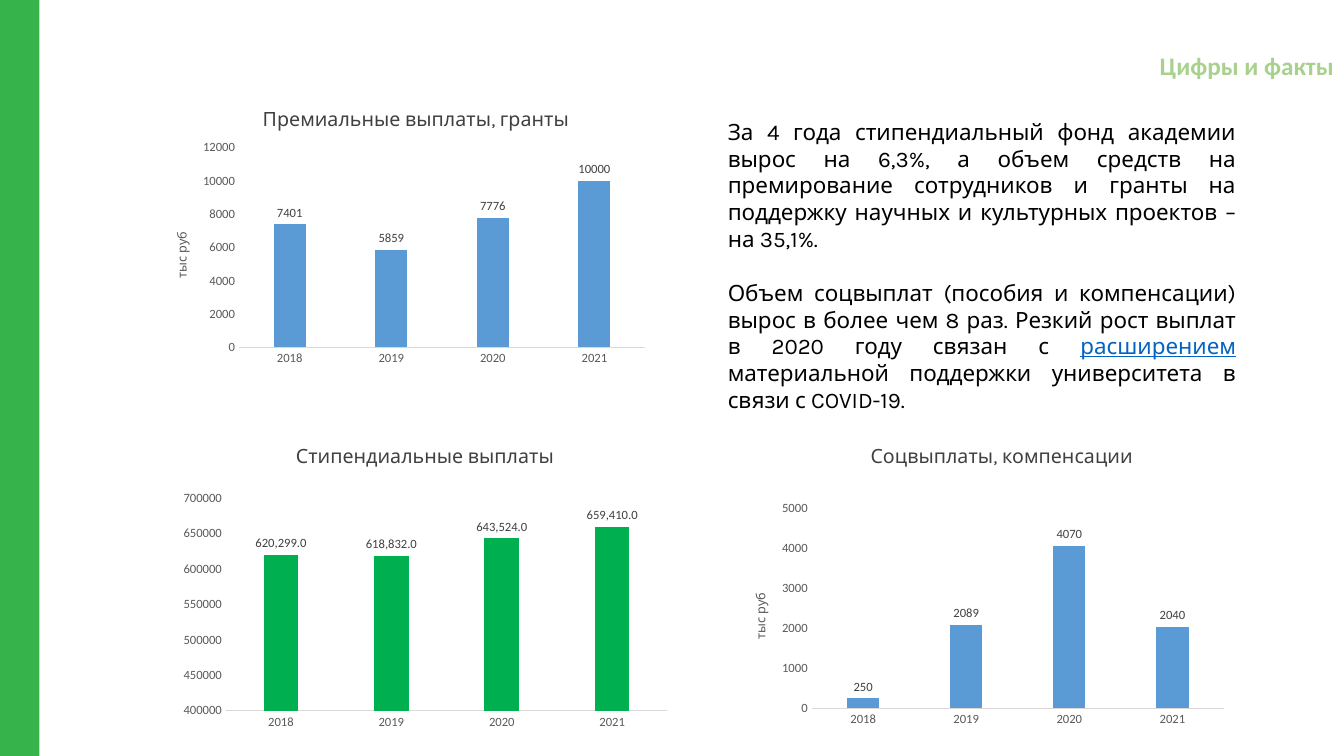
from dataclasses import dataclass
from typing import Optional

from lxml.etree import SubElement
from pptx import Presentation
from pptx.chart.chart import Chart
from pptx.chart.data import CategoryChartData as ChartData
from pptx.dml.color import RGBColor
from pptx.enum.chart import XL_CHART_TYPE as ChartType
from pptx.enum.chart import XL_LABEL_POSITION as LabelPosition
from pptx.enum.chart import XL_TICK_MARK as TickMark
from pptx.enum.shapes import MSO_SHAPE as ShapeType
from pptx.enum.text import MSO_ANCHOR as Anchor
from pptx.enum.text import MSO_AUTO_SIZE as AutoSize
from pptx.enum.text import PP_ALIGN as Align
from pptx.oxml.ns import qn
from pptx.oxml.xmlchemy import BaseOxmlElement
from pptx.shapes.base import BaseShape
from pptx.slide import Slide
from pptx.text.text import Font, TextFrame
from pptx.util import Inches, Pt


@dataclass(frozen=True)
class Theme:
    heading_font: str = "Calibri"
    body_font: str = "Karla"
    bar: str = "37B34B"
    title: str = "A9D18E"
    text: str = "000000"
    link: str = "0563C1"
    caption: str = "404040"
    axis: str = "595959"
    axis_line: str = "D9D9D9"
    blue: str = "5B9BD5"
    green: str = "00B050"
    title_size: int = 18
    body_size: int = 16
    caption_size: int = 14
    chart_size: int = 10
    axis_size: int = 9
    paragraph_gap: int = 19


THEME = Theme()


@dataclass(frozen=True)
class Area:
    left: float
    top: float
    width: float
    height: float


@dataclass(frozen=True)
class Span:
    text: str
    color: str
    underline: bool = False


@dataclass(frozen=True)
class Panel:
    caption: str
    caption_area: Area
    chart_area: Area
    plot_left: float
    plot_width: float
    values: tuple[int, ...]
    color: str
    minimum: int
    maximum: int
    step: int
    unit: Optional[str] = None
    label_format: str = "General"


YEARS = ("2018", "2019", "2020", "2021")
PLOT_TOP, PLOT_HEIGHT = 0.05, 0.85
UNIT_LEFT, UNIT_TOP = 0.04, 0.4

PANELS = (
    Panel("Премиальные выплаты, гранты", Area(1.73, 1.01, 4.79, 0.34),
          Area(1.5, 1.35, 5, 2.33), 0.87, 4.03, (7401, 5859, 7776, 10000),
          THEME.blue, 0, 12000, 2000, unit="тыс руб"),
    Panel("Стипендиальные выплаты", Area(1.82, 4.35, 4.79, 0.34),
          Area(1.71, 4.82, 5, 2.48), 0.53, 4.38, (620299, 618832, 643524, 659410),
          THEME.green, 400000, 700000, 50000, label_format="#,##0.0"),
    Panel("Соцвыплаты, компенсации", Area(7.74, 4.35, 4.39, 0.34),
          Area(7.24, 4.93, 5, 2.33), 0.81, 4.09, (250, 2089, 4070, 2040),
          THEME.blue, 0, 5000, 1000, unit="тыс руб"),
)

STORY = (
    (Span("За 4 года стипендиальный фонд академии вырос на 6,3%, а объем средств "
          "на премирование сотрудников и гранты на поддержку научных и культурных "
          "проектов – на 35,1%.", THEME.text),),
    (Span("Объем соцвыплат (пособия и компенсации) вырос в более чем 8 раз. "
          "Резкий рост выплат в 2020 году связан с ", THEME.text),
     Span("расширением", THEME.link, underline=True),
     Span(" материальной поддержки университета в связи с COVID-19.", THEME.text)),
)


def inches(area: Area) -> tuple[Inches, ...]:
    return tuple(Inches(n) for n in (area.left, area.top, area.width, area.height))


def style_font(font: Font, name: str, size: int, color: str) -> None:
    font.name = name
    font.size = Pt(size)
    font.color.rgb = RGBColor.from_string(color)


def write(frame: TextFrame, paragraphs: tuple[tuple[Span, ...], ...], align: Align,
          name: str, size: int, bold: bool = False) -> None:
    frame.word_wrap = True
    frame.auto_size = AutoSize.SHAPE_TO_FIT_TEXT
    frame.vertical_anchor = Anchor.TOP
    for index, spans in enumerate(paragraphs):
        para = frame.add_paragraph() if index else frame.paragraphs[0]
        para.alignment = align
        para.space_before = Pt(THEME.paragraph_gap if index else 0)
        for span in spans:
            run = para.add_run()
            run.text = span.text
            style_font(run.font, name, size, span.color)
            run.font.bold = bold
            run.font.underline = span.underline


def add_text(page: Slide, area: Area, paragraphs: tuple[tuple[Span, ...], ...],
             align: Align, size: int) -> None:
    box = page.shapes.add_textbox(*inches(area))
    write(box.text_frame, paragraphs, align, THEME.body_font, size)


def place(shape: BaseShape, area: Area) -> None:
    shape.left, shape.top, shape.width, shape.height = inches(area)


def set_layout(parent: BaseOxmlElement, position: int, **settings: object) -> None:
    for old in parent.findall(qn("c:layout")):
        parent.remove(old)
    layout = SubElement(parent, qn("c:layout"))
    parent.insert(position, layout)
    manual = SubElement(layout, qn("c:manualLayout"))
    for tag, value in settings.items():
        SubElement(manual, qn(f"c:{tag}")).set("val", str(value))


def style_axes(chart: Chart, panel: Panel) -> None:
    for axis in (chart.category_axis, chart.value_axis):
        axis.has_major_gridlines = False
        axis.major_tick_mark = axis.minor_tick_mark = TickMark.NONE
        style_font(axis.tick_labels.font, THEME.heading_font, THEME.axis_size, THEME.axis)
    line = chart.category_axis.format.line
    line.color.rgb = RGBColor.from_string(THEME.axis_line)
    line.width = Pt(0.75)
    scale = chart.value_axis
    scale.format.line.fill.background()
    scale.minimum_scale, scale.maximum_scale = panel.minimum, panel.maximum
    scale.major_unit = panel.step
    if panel.unit:
        title = scale.axis_title
        run = title.text_frame.paragraphs[0].add_run()
        run.text = panel.unit
        style_font(run.font, THEME.body_font, THEME.axis_size, THEME.axis)
        run.font.bold = False
        body = title.text_frame._txBody.find(qn("a:bodyPr"))
        body.set("rot", "-5400000")
        body.set("vert", "horz")
        set_layout(title._element, 1, xMode="edge", yMode="edge", x=UNIT_LEFT, y=UNIT_TOP)


def add_panel(page: Slide, panel: Panel) -> None:
    data = ChartData()
    data.categories = YEARS
    data.add_series("Series 1", panel.values)
    chart = page.shapes.add_chart(
        ChartType.COLUMN_CLUSTERED, *inches(panel.chart_area), data).chart
    chart.has_title = chart.has_legend = False
    style_font(chart.font, THEME.heading_font, THEME.chart_size, THEME.text)
    style_axes(chart, panel)
    plot = chart.plots[0]
    plot.gap_width, plot.overlap, plot.vary_by_categories = 219, -27, False
    fill = plot.series[0].format.fill
    fill.solid()
    fill.fore_color.rgb = RGBColor.from_string(panel.color)
    labels = plot.series[0].data_labels
    labels.show_value = True
    labels.position = LabelPosition.OUTSIDE_END
    labels.number_format = panel.label_format
    labels.number_format_is_linked = False
    style_font(labels.font, THEME.heading_font, THEME.axis_size, THEME.caption)
    width = panel.chart_area.width
    set_layout(chart._chartSpace.chart.plotArea, 0, layoutTarget="inner",
               xMode="edge", yMode="edge", x=panel.plot_left / width, y=PLOT_TOP,
               w=panel.plot_width / width, h=PLOT_HEIGHT)
    add_text(page, panel.caption_area, ((Span(panel.caption, THEME.caption),),),
             Align.CENTER, THEME.caption_size)


def main() -> None:
    deck = Presentation()
    deck.slide_width, deck.slide_height = Inches(13.33), Inches(7.5)
    page = deck.slides.add_slide(deck.slide_layouts.get_by_name("Title Only"))
    title = page.shapes.title
    place(title, Area(10.76, 0.45, 2.57, 0.4))
    write(title.text_frame, ((Span("Цифры и факты", THEME.title),),), Align.RIGHT,
          THEME.heading_font, THEME.title_size, bold=True)
    bar = page.shapes.add_shape(ShapeType.RECTANGLE, *inches(Area(0, 0, 0.39, 7.5)))
    bar.shadow.inherit = False
    bar.fill.solid()
    bar.fill.fore_color.rgb = RGBColor.from_string(THEME.bar)
    bar.line.fill.background()
    for panel in PANELS:
        add_panel(page, panel)
    add_text(page, Area(7.12, 1.12, 5.24, 2.79), STORY, Align.JUSTIFY, THEME.body_size)
    deck.save("out.pptx")


if __name__ == "__main__":
    main()
